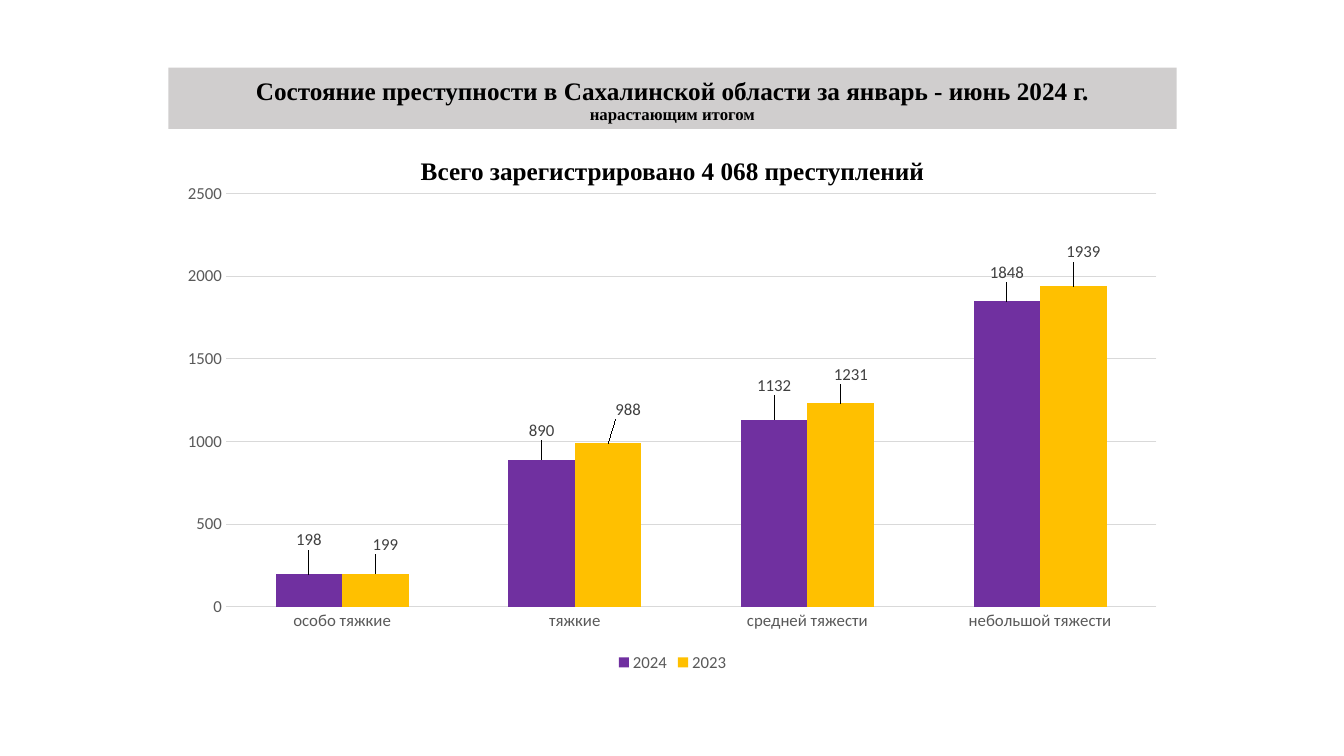
from lxml import etree
from pptx import Presentation
from pptx import util as u
from pptx.chart.data import CategoryChartData
from pptx.dml.color import RGBColor
from pptx.enum import chart as charts, shapes, text
from pptx.oxml.ns import qn

CATEGORIES = ["особо тяжкие", "тяжкие", "средней тяжести", "небольшой тяжести"]
# Each year: colour, values, label shifts as fractions of the chart size
YEARS = {
    "2024": ("7030A0", [198, 890, 1132, 1848],
             [(0, -0.04), (0, -0.03), (0, -0.04), (0, -0.03)]),
    "2023": ("FFC000", [199, 988, 1231, 1939],
             [(0.01, -0.03), (0.02, -0.04), (0.01, -0.03), (0.01, -0.04)]),
}


def color(value):
    return RGBColor.from_string(value)


def set_font(font, name, size, value, bold=False):
    font.name, font.size, font.bold = name, u.Pt(size), bold
    font.color.rgb = color(value)


def make_layout(**settings):
    """Build a manual c:layout element."""
    layout = etree.Element(qn("c:layout"))
    manual = etree.SubElement(layout, qn("c:manualLayout"))
    for name, value in settings.items():
        etree.SubElement(manual, qn(f"c:{name}")).set("val", str(value))
    return layout


def write_heading(shape, content, sizes, line_spacing):
    """Write one centred paragraph, with one size for each line."""
    shape.text_frame.word_wrap = True
    paragraph = shape.text_frame.paragraphs[0]
    paragraph.text = content
    paragraph.alignment = text.PP_ALIGN.CENTER
    paragraph.line_spacing = line_spacing
    for run, size in zip(paragraph.runs, sizes):
        set_font(run.font, "Times New Roman", size, "000000", True)
    return paragraph


def add_title(slide, *box):
    shape = slide.shapes.add_shape(shapes.MSO_SHAPE.RECTANGLE, *map(u.Inches, box))
    shape.shadow.inherit = False
    shape.fill.solid()
    shape.fill.fore_color.rgb = color("D0CECE")
    shape.line.fill.background()
    shape.text_frame.vertical_anchor = text.MSO_ANCHOR.BOTTOM
    write_heading(
        shape,
        "Состояние преступности в Сахалинской области за январь - июнь 2024 г.\v"
        "нарастающим итогом",
        (18, 12), 0.9)


def add_subtitle(slide, *box):
    shape = slide.shapes.add_textbox(*map(u.Inches, box))
    paragraph = write_heading(
        shape, "Всего зарегистрировано 4 068 преступлений", (18,), 0.8)
    paragraph.space_before = u.Pt(10)


def style_axes(chart):
    for axis in (chart.category_axis, chart.value_axis):
        axis.major_tick_mark = axis.minor_tick_mark = charts.XL_TICK_MARK.NONE
        axis.format.line.fill.background()
        set_font(axis.tick_labels.font, "Calibri", 12, "595959")
    value_axis = chart.value_axis
    value_axis.minimum_scale, value_axis.maximum_scale = 0, 2500
    value_axis.major_unit = 500
    grid_line = value_axis.major_gridlines.format.line
    grid_line.color.rgb = color("D9D9D9")
    grid_line.width = u.Pt(0.75)


def style_series(series, fill, shifts):
    series.format.fill.solid()
    series.format.fill.fore_color.rgb = color(fill)
    series.data_labels.show_value = True
    set_font(series.data_labels.font, "Calibri", 12, "404040")
    for index, (x, y) in enumerate(shifts):
        label = series.points[index].data_label
        set_font(label.font, "Calibri", 12, "404040")
        label.position = charts.XL_LABEL_POSITION.OUTSIDE_END
    # Shift each label from its usual place above the column
    labels = series.data_labels._element.findall(qn("c:dLbl"))
    for label, (x, y) in zip(labels, shifts):
        label.find(qn("c:idx")).addnext(make_layout(x=x, y=y))


def add_crime_chart(slide, *box):
    data = CategoryChartData()
    data.categories = CATEGORIES
    for year, (_, values, _) in YEARS.items():
        data.add_series(year, values)
    chart = slide.shapes.add_chart(
        charts.XL_CHART_TYPE.COLUMN_CLUSTERED, *map(u.Inches, box), data).chart
    chart.has_title = False
    set_font(chart.font, "Calibri", 10, "000000")

    # Plot area
    plot = chart.plots[0]
    plot.gap_width, plot.overlap, plot.vary_by_categories = 150, 0, False
    plot_area = chart._chartSpace.chart.plotArea
    for layout in plot_area.findall(qn("c:layout")):
        plot_area.remove(layout)
    plot_area.insert(0, make_layout(
        layoutTarget="inner", xMode="edge", yMode="edge",
        x=0.057, y=0.04, w=0.923, h=0.822))
    style_axes(chart)
    for series in plot.series:
        fill, _, shifts = YEARS[series.name]
        style_series(series, fill, shifts)

    # Legend
    chart.has_legend = True
    chart.legend.position = charts.XL_LEGEND_POSITION.BOTTOM
    chart.legend.include_in_layout = False
    set_font(chart.legend.font, "Calibri", 12, "595959")


def main():
    presentation = Presentation()
    presentation.slide_width = u.Inches(13.33)
    presentation.slide_height = u.Inches(7.5)
    slide = presentation.slides.add_slide(presentation.slide_layouts[6])
    left, width = 1.67, 10
    add_title(slide, left, 0.67, width, 0.61)
    add_subtitle(slide, left, 1.55, width, 0.36)
    add_crime_chart(slide, left, 1.72, width, 4.99)
    presentation.save("out.pptx")


if __name__ == "__main__":
    main()
